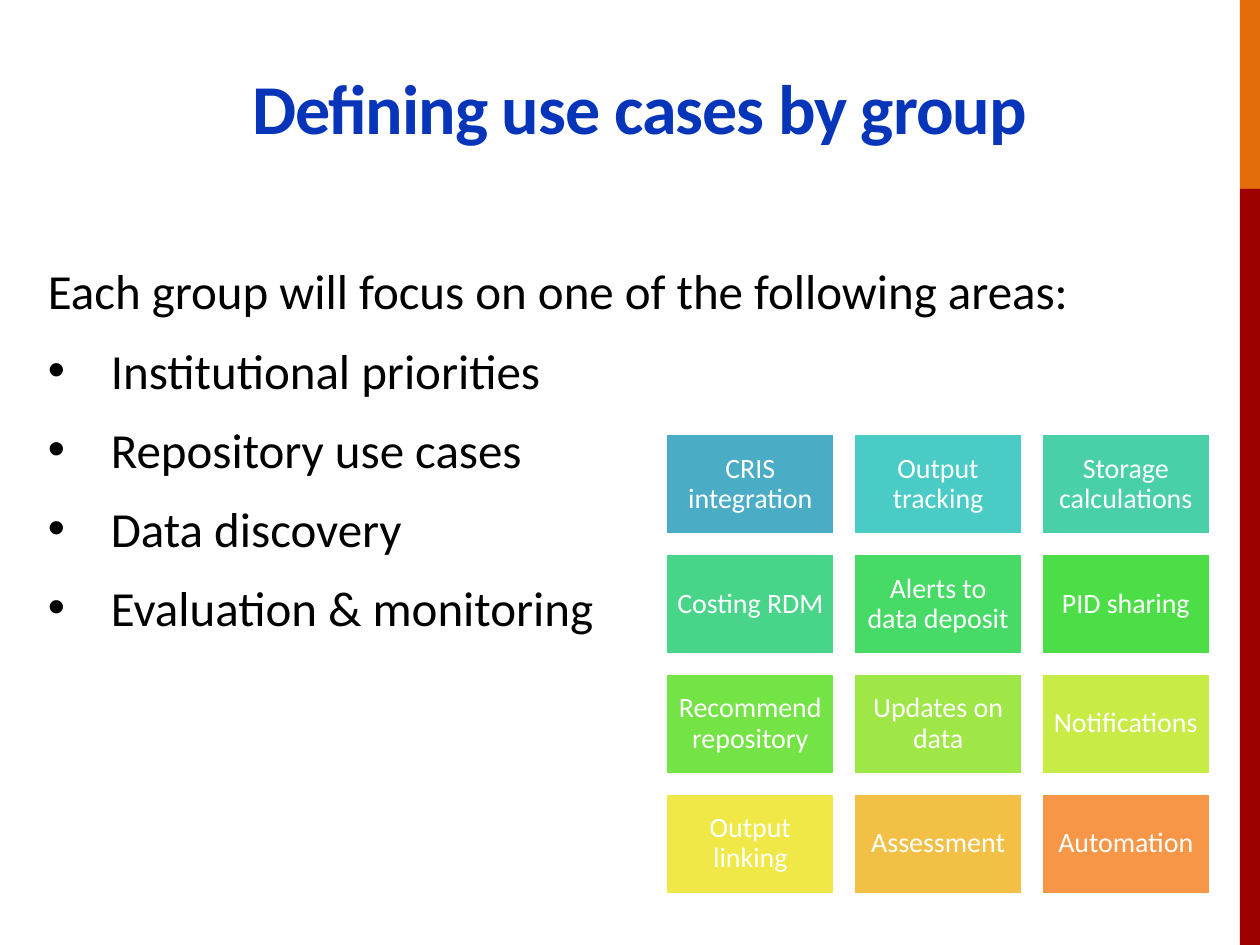
from lxml import etree
from pptx import Presentation
from pptx.dml.color import RGBColor
from pptx.enum.shapes import MSO_SHAPE as Shape
from pptx.enum.text import MSO_ANCHOR as Anchor, MSO_AUTO_SIZE as AutoSize, PP_ALIGN as Align
from pptx.oxml.ns import qn
from pptx.util import Inches, Pt

COLORS = {"title": "0635BA", "body": "000000", "white": "FFFFFF",
          "orange": "E46C0A", "red": "9E0000"}
TITLE_FONT = {"name": "Calibri", "size": Pt(40), "bold": True}
BODY_FONT = {"name": "Calibri", "size": Pt(28)}
TILE_FONT = {"name": "Calibri", "size": Pt(16)}
TILES = [
    ("CRIS integration", "4BACC6"), ("Output tracking", "4ACBC6"),
    ("Storage calculations", "49D0A9"), ("Costing RDM", "48D589"),
    ("Alerts to data deposit", "47DA66"), ("PID sharing", "4DDE47"),
    ("Recommend repository", "74E346"), ("Updates on data", "9EE746"),
    ("Notifications", "C9EB46"), ("Output linking", "EFE846"),
    ("Assessment", "F3C046"), ("Automation", "F79646"),
]
AREAS = ["Institutional priorities", "Repository use cases",
         "Data discovery", "Evaluation & monitoring"]


def add_span(para, text, font, color):
    span = para.add_run()
    span.text = text
    for name, value in font.items():
        setattr(span.font, name, value)
    span.font.color.rgb = RGBColor.from_string(color)
    return span


def add_block(page, left, top, width, height, color):
    block = page.shapes.add_shape(
        Shape.RECTANGLE, Inches(left), Inches(top), Inches(width), Inches(height))
    block.shadow.inherit = False
    block.fill.solid()
    block.fill.fore_color.rgb = RGBColor.from_string(color)
    block.line.fill.background()
    return block


deck = Presentation()
deck.slide_width, deck.slide_height = Inches(10), Inches(7.5)
page = deck.slides.add_slide(deck.slide_layouts[1])

add_block(page, 9.84, 0, 0.16, 1.5, COLORS["orange"])
add_block(page, 9.84, 1.5, 0.16, 6, COLORS["red"])

title, body = page.shapes.title, page.placeholders[1]
for box, place in ((title, (0.5, 0.48, 9.15, 0.75)), (body, (0.28, 2.02, 8.83, 5.23))):
    box.left, box.top, box.width, box.height = [Inches(length) for length in place]
    box.text_frame.auto_size = AutoSize.NONE

title.text_frame.vertical_anchor = Anchor.BOTTOM
para = title.text_frame.paragraphs[0]
para.alignment = Align.CENTER
span = add_span(para, "Defining use cases by group", TITLE_FONT, COLORS["title"])
span.font._element.set("spc", "-60")

lines = ["Each group will focus on one of the following areas:"] + AREAS
for index, text in enumerate(lines):
    para = body.text_frame.add_paragraph() if index else body.text_frame.paragraphs[0]
    para.space_after = Pt(6)
    add_span(para, text, BODY_FONT, COLORS["body"])
    props = para._p.get_or_add_pPr()
    indent = Inches(0.5) if index else 0
    props.set("marL", str(indent))
    props.set("indent", str(-indent))
    if index:
        etree.SubElement(props, qn("a:buChar")).set("char", "•")
    else:
        etree.SubElement(props, qn("a:buNone"))

for index, (text, color) in enumerate(TILES):
    row, column = divmod(index, 3)
    tile = add_block(page, 5.28 + column * 1.49, 3.44 + row * 0.95, 1.35, 0.81, color)
    tile.line.color.rgb = RGBColor.from_string(COLORS["white"])
    tile.line.width = Pt(2.25)
    frame = tile.text_frame
    frame.word_wrap = True
    frame.vertical_anchor = Anchor.MIDDLE
    for side in ("left", "top", "right", "bottom"):
        setattr(frame, f"margin_{side}", Inches(0.07))
    para = frame.paragraphs[0]
    para.alignment = Align.CENTER
    para.line_spacing = 0.9
    add_span(para, text, TILE_FONT, COLORS["white"])

deck.save("out.pptx")
